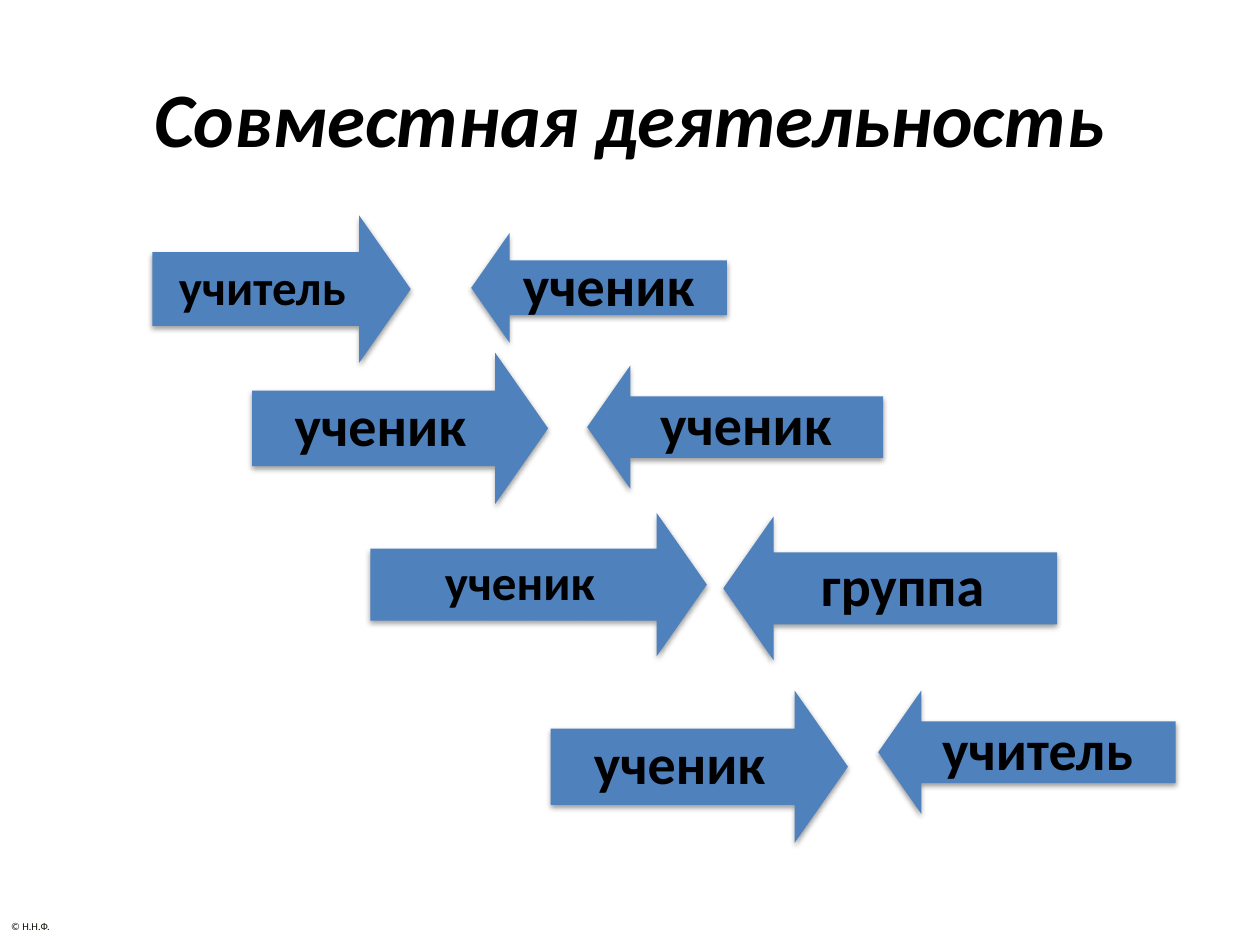
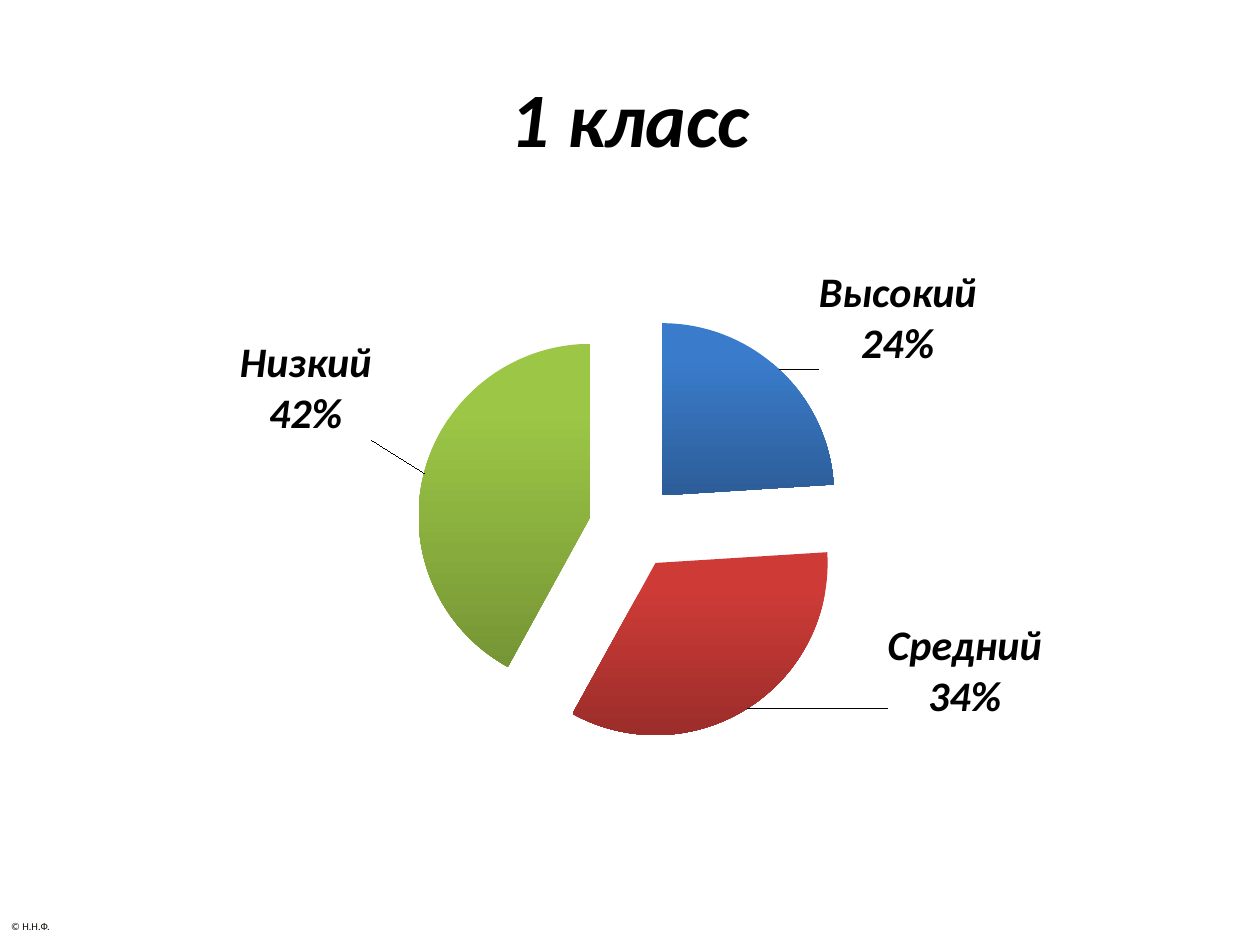
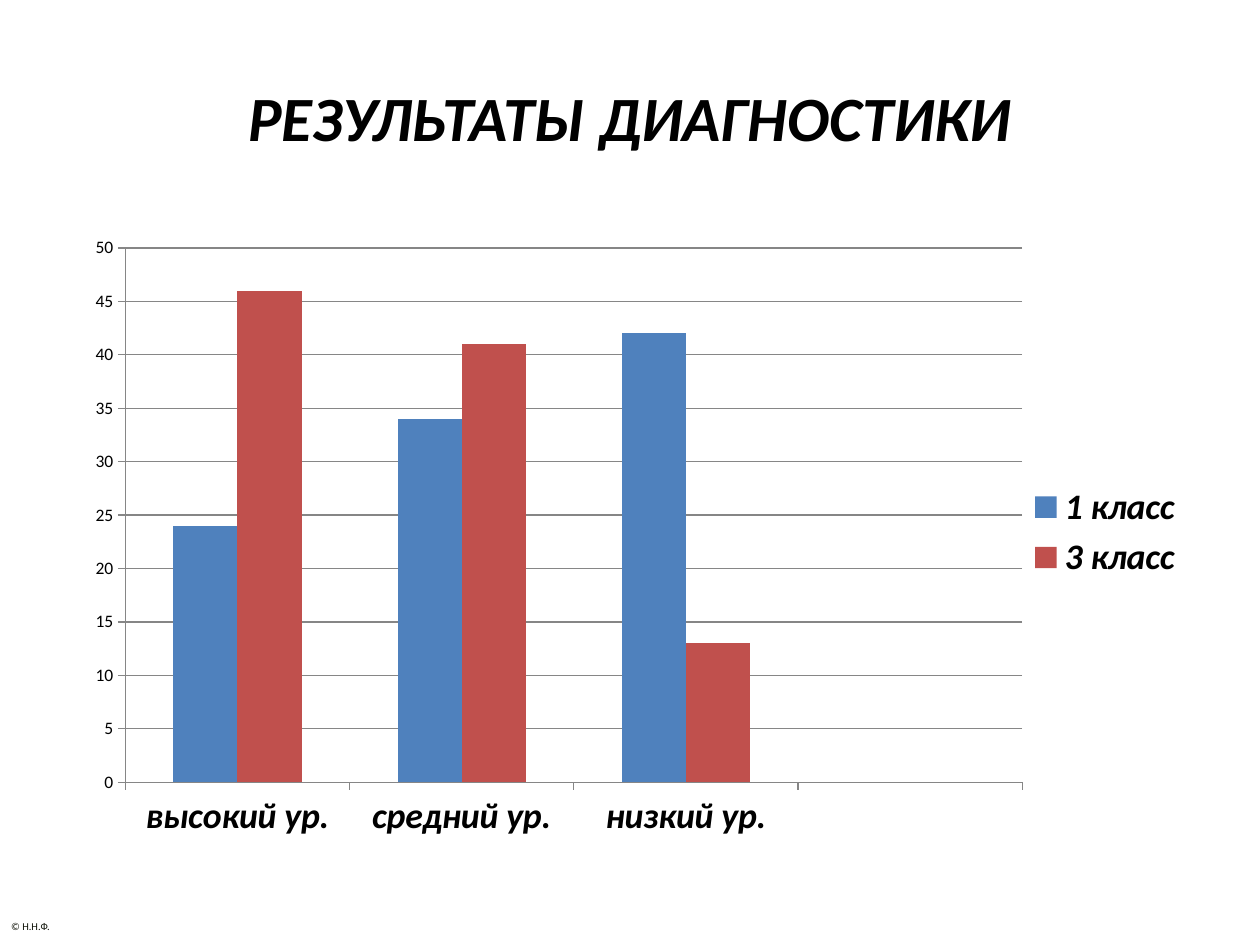
import dataclasses
from typing import Any

import lxml.etree
import pptx
import pptx.chart.data
import pptx.dml.color
import pptx.enum.chart
import pptx.enum.shapes
import pptx.enum.text
import pptx.oxml.ns
import pptx.util

Inches = pptx.util.Inches
Pt = pptx.util.Pt
RGB = pptx.dml.color.RGBColor
qn = pptx.oxml.ns.qn


@dataclasses.dataclass(frozen=True)
class Theme:
    font: str = "Calibri"
    ink: RGB = RGB(0, 0, 0)
    footer_ink: RGB = RGB(0x0E, 0x11, 0x07)
    grid: RGB = RGB(0x86, 0x86, 0x86)
    blue: RGB = RGB(0x4F, 0x81, 0xBD)
    red: RGB = RGB(0xC0, 0x50, 0x4D)
    title: float = 44
    title_small: float = 36
    arrow: float = 32
    arrow_small: float = 28
    label: float = 24
    axis_label: float = 20.5
    chart: float = 10
    footer: float = 6


THEME = Theme()


@dataclasses.dataclass(frozen=True)
class Arrow:
    text: str
    left: float
    top: float
    width: float
    height: float
    to_right: bool
    size: float = THEME.arrow


@dataclasses.dataclass(frozen=True)
class Slice:
    level: str
    share: float
    light: RGB
    dark: RGB
    shift_x: float
    shift_y: float


ARROWS = [
    Arrow("учитель", 1.21, 1.71, 2.05, 1.17, True, THEME.arrow_small),
    Arrow("ученик", 3.74, 1.85, 2.03, 0.87, False),
    Arrow("ученик", 2.0, 2.8, 2.35, 1.2, True),
    Arrow("ученик", 4.66, 2.9, 2.35, 0.98, False),
    Arrow("ученик", 2.94, 4.07, 2.67, 1.14, True, THEME.arrow_small),
    Arrow("группа", 5.74, 4.1, 2.65, 1.14, False),
    Arrow("ученик", 4.37, 5.48, 2.36, 1.21, True),
    Arrow("учитель", 6.97, 5.48, 2.36, 0.98, False),
]

SLICES = [
    Slice("Высокий", 0.24, RGB(0x3A, 0x7C, 0xCB), RGB(0x2C, 0x5D, 0x98), 0.03, 0.01),
    Slice("Средний", 0.34, RGB(0xCE, 0x3B, 0x37), RGB(0x9B, 0x2D, 0x2A), 0.12, -0.15),
    Slice("Низкий", 0.42, RGB(0x9C, 0xC7, 0x46), RGB(0x76, 0x95, 0x35), -0.04, -0.05),
]

LEVELS = ["высокий ур.", "средний ур.", "низкий ур.", ""]
RESULTS = [
    ("1 класс", THEME.blue, [24, 34, 42, None]),
    ("3 класс", THEME.red, [46, 41, 13, None]),
]


def style(font: Any, size: float, bold: bool = False, italic: bool = False,
          color: RGB = THEME.ink) -> None:
    font.name = THEME.font
    font.size = Pt(size)
    font.bold = bold
    font.italic = italic
    font.color.rgb = color


def add_slide(prs: Any, title: str, size: float = THEME.title) -> Any:
    s = prs.slides.add_slide(prs.slide_layouts[5])
    box = s.shapes.title
    box.left, box.top, box.width, box.height = map(Inches, (0.5, 0.3, 9, 1.25))
    box.text_frame.text = title
    p = box.text_frame.paragraphs[0]
    p.alignment = pptx.enum.text.PP_ALIGN.CENTER
    style(p.font, size, bold=True, italic=True)
    return s


def add_master_footer(prs: Any, s: Any) -> None:
    box = s.shapes.add_textbox(Inches(-0.01), Inches(7.25), Inches(0.52), Inches(0.2))
    tf = box.text_frame
    tf.word_wrap = False
    tf.auto_size = pptx.enum.text.MSO_AUTO_SIZE.SHAPE_TO_FIT_TEXT
    tf.text = "© Н.Н.Ф."
    style(tf.paragraphs[0].font, THEME.footer, color=THEME.footer_ink)
    prs.slide_master.element.cSld.spTree.append(box.element)


def add_shadow(sp: Any) -> None:
    sp.shadow.inherit = False
    effects = sp.element.spPr.find(qn("a:effectLst"))
    shadow = lxml.etree.SubElement(
        effects, qn("a:outerShdw"), blurRad="40000", dist="20000",
        dir="5400000", rotWithShape="0")
    color = lxml.etree.SubElement(shadow, qn("a:srgbClr"), val=str(THEME.ink))
    lxml.etree.SubElement(color, qn("a:alpha"), val="38000")


def add_arrow(s: Any, arrow: Arrow) -> None:
    kinds = pptx.enum.shapes.MSO_SHAPE
    sp = s.shapes.add_shape(
        kinds.RIGHT_ARROW if arrow.to_right else kinds.LEFT_ARROW,
        Inches(arrow.left), Inches(arrow.top), Inches(arrow.width), Inches(arrow.height))
    sp.adjustments[0] = 0.5
    sp.adjustments[1] = 0.35
    sp.fill.solid()
    sp.fill.fore_color.rgb = THEME.blue
    sp.line.fill.background()
    add_shadow(sp)
    tf = sp.text_frame
    tf.word_wrap = True
    tf.vertical_anchor = pptx.enum.text.MSO_ANCHOR.MIDDLE
    tf.margin_left = Inches(0.15)
    tf.margin_right = Inches(0.25 if arrow.to_right else 0.15)
    tf.margin_top = tf.margin_bottom = 0
    tf.text = arrow.text
    p = tf.paragraphs[0]
    p.alignment = pptx.enum.text.PP_ALIGN.CENTER
    p.line_spacing = 0.9
    style(p.font, arrow.size, bold=True)


def make_layout(**values: Any) -> Any:
    layout = lxml.etree.Element(qn("c:layout"))
    manual = lxml.etree.SubElement(layout, qn("c:manualLayout"))
    for name, value in values.items():
        lxml.etree.SubElement(manual, qn(f"c:{name}"), val=str(value))
    return layout


def place_plot(chart: Any, x: float, y: float, w: float, h: float) -> None:
    area = chart.element.find(".//" + qn("c:plotArea"))
    for old in area.findall(qn("c:layout")):
        area.remove(old)
    area.insert(0, make_layout(layoutTarget="inner", xMode="edge", yMode="edge",
                               x=x, y=y, w=w, h=h))


def add_chart(s: Any, kind: Any, left: float, top: float, data: Any) -> Any:
    chart = s.shapes.add_chart(
        kind, Inches(left), Inches(top), Inches(9), Inches(4.95), data).chart
    chart.has_title = False
    chart.has_legend = False
    style(chart.font, THEME.chart)
    return chart


def add_pie(s: Any) -> None:
    data = pptx.chart.data.CategoryChartData(number_format="0%")
    data.categories = [str(i + 1) for i in range(len(SLICES))]
    data.add_series("1 класс", [item.share for item in SLICES])
    chart = add_chart(s, pptx.enum.chart.XL_CHART_TYPE.PIE, 0.43, 1.78, data)
    place_plot(chart, 0.32, 0.14, 0.38, 0.69)
    series = chart.plots[0].series[0]
    explosion = lxml.etree.Element(qn("c:explosion"), val="25")
    chart.element.find(".//" + qn("c:ser")).find(qn("c:tx")).addnext(explosion)
    series.data_labels.show_value = True
    for i, item in enumerate(SLICES):
        point = series.points[i]
        fill = point.format.fill
        fill.gradient()
        fill.gradient_angle = 270
        for stop, color, position in zip(
                fill.gradient_stops, (item.light, item.dark), (0.2, 1.0)):
            stop.color.rgb = color
            stop.position = position
        label = point.data_label
        label.text_frame.text = f"{item.level}\n{item.share:.0%}"
        label.position = pptx.enum.chart.XL_LABEL_POSITION.OUTSIDE_END
        for p in label.text_frame.paragraphs:
            for r in p.runs:
                style(r.font, THEME.label, bold=True, italic=True)
    for item, label in zip(SLICES, chart.element.findall(".//" + qn("c:dLbl"))):
        for old in label.findall(qn("c:layout")):
            label.remove(old)
        label.find(qn("c:idx")).addnext(make_layout(x=item.shift_x, y=item.shift_y))


def add_columns(s: Any) -> None:
    data = pptx.chart.data.CategoryChartData()
    data.categories = LEVELS
    for name, _, values in RESULTS:
        data.add_series(name, values)
    chart = add_chart(s, pptx.enum.chart.XL_CHART_TYPE.COLUMN_CLUSTERED, 0.5, 1.75, data)
    place_plot(chart, 0.055, 0.044, 0.791, 0.857)
    plot = chart.plots[0]
    plot.gap_width = 150
    plot.vary_by_categories = False
    for series, (_, color, _) in zip(plot.series, RESULTS):
        series.format.fill.solid()
        series.format.fill.fore_color.rgb = color
    values = chart.value_axis
    values.minimum_scale, values.maximum_scale, values.major_unit = 0, 50, 5
    values.has_major_gridlines = True
    for axis in (chart.category_axis, values):
        axis.major_tick_mark = pptx.enum.chart.XL_TICK_MARK.OUTSIDE
    for lines in (values, chart.category_axis, values.major_gridlines):
        lines.format.line.color.rgb = THEME.grid
        lines.format.line.width = Pt(0.75)
    chart.has_legend = True
    chart.legend.position = pptx.enum.chart.XL_LEGEND_POSITION.RIGHT
    chart.legend.include_in_layout = False
    for part in (chart.category_axis.tick_labels, chart.legend):
        style(part.font, THEME.axis_label, bold=True, italic=True)


def main() -> None:
    prs = pptx.Presentation()
    prs.slide_width, prs.slide_height = Inches(10), Inches(7.5)

    s = add_slide(prs, "Совместная деятельность")
    add_master_footer(prs, s)
    for arrow in ARROWS:
        add_arrow(s, arrow)

    add_pie(add_slide(prs, "1 класс"))
    add_columns(add_slide(prs, "РЕЗУЛЬТАТЫ ДИАГНОСТИКИ", THEME.title_small))

    prs.save("out.pptx")


if __name__ == "__main__":
    main()
